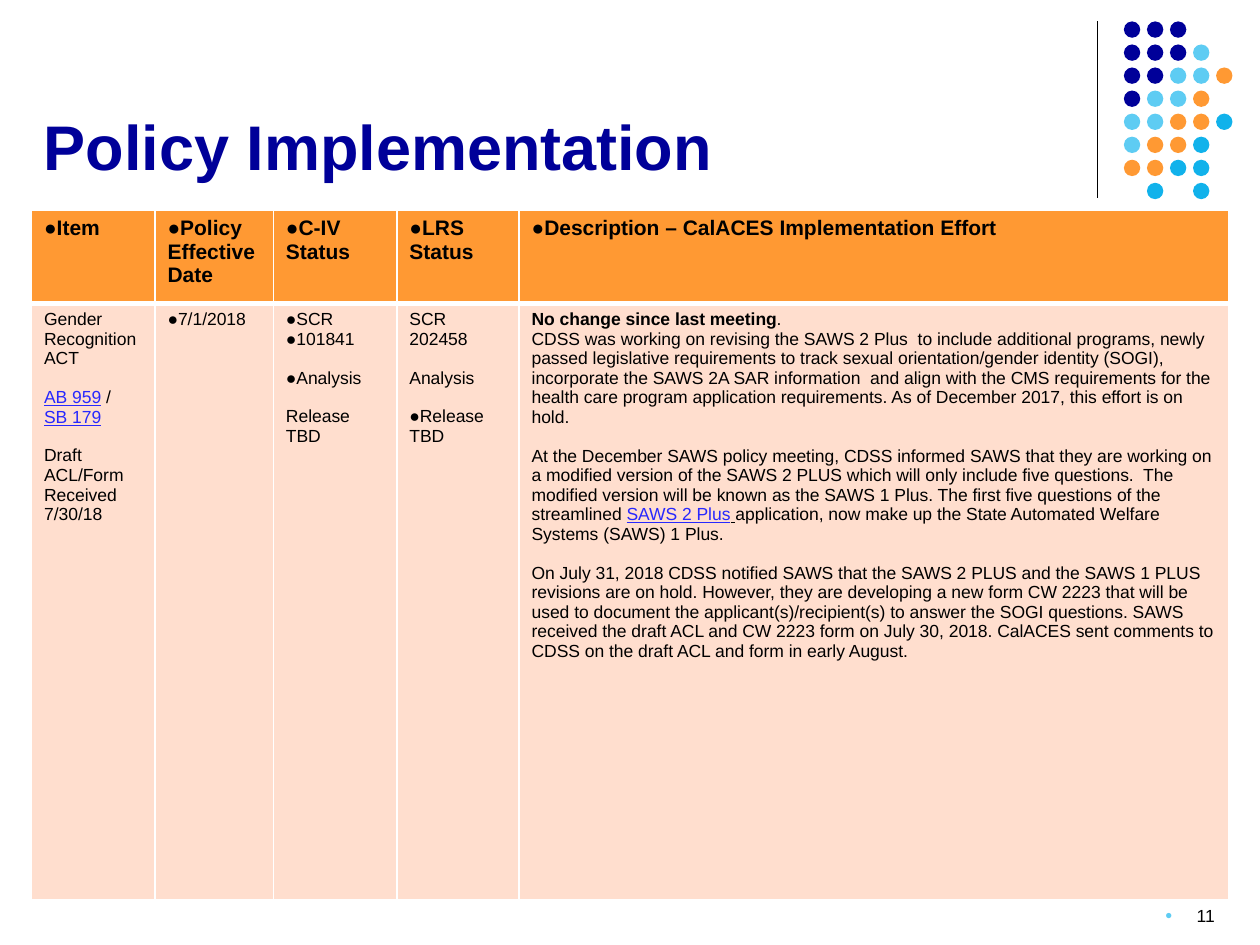
"""Build the Policy Implementation status slide."""
from lxml import etree
from pptx import Presentation
from pptx import util as u
from pptx.dml.color import RGBColor
from pptx.enum import shapes, text
from pptx.oxml.ns import qn

FONT = "Arial"
NAVY, SKY, ORANGE, BLUE = "000099", "5ECCF3", "FF9933", "11B2EB"
PEACH, LINK, BLACK, WHITE = "FFDECE", "2828FE", "000000", "FFFFFF"

DOT_COLORS = {"N": NAVY, "S": SKY, "O": ORANGE, "B": BLUE}
DOT_ROWS = ["NNN", "NNNS", "NNSSO", "NSSO", "SSOOB", "SOOB", "OOBB", " B B"]
DOT_LEFT, DOT_TOP, DOT_SIZE, DOT_PITCH = 8.92, 0.17, 0.13, 0.183

TITLE = "Policy Implementation"
PAGE_NUMBER = "11"
COLUMN_WIDTHS = [0.98, 0.94, 0.98, 0.97, 5.63]
ROW_HEIGHTS = [0.74, 4.73]
HEADERS = ["Item", "Policy Effective Date", "C-IV Status", "LRS Status",
           "Description – CalACES Implementation Effort"]
LINKED = {"color": LINK, "underline": True}
GAP = 11

BODY = [
    [
        {"content": "Gender Recognition ACT"},
        {"content": [("AB 959", LINKED), (" /", {})], "before": GAP},
        {"content": [("SB 179", LINKED)]},
        {"content": "Draft ACL/Form", "before": GAP},
        {"content": "Received 7/30/18"},
    ],
    [{"content": "7/1/2018", "bullet": BLACK}],
    [
        {"content": "SCR", "bullet": BLACK},
        {"content": "101841", "bullet": BLACK},
        {"content": "Analysis", "bullet": BLACK, "before": GAP},
        {"content": "Release", "before": GAP},
        {"content": "TBD"},
    ],
    [
        {"content": "SCR"},
        {"content": "202458"},
        {"content": "Analysis", "before": GAP},
        {"content": "Release TBD", "bullet": BLACK, "before": GAP},
    ],
    [
        {"content": [("No change since last meeting", {"bold": True}), (".", {})]},
        {"content": "CDSS was working on revising the SAWS 2 Plus  to include additional "
                    "programs, newly passed legislative requirements to track sexual "
                    "orientation/gender identity (SOGI), incorporate the SAWS 2A SAR "
                    "information  and align with the CMS requirements for the health care "
                    "program application requirements. As of December 2017, this effort is "
                    "on hold."},
        {"content": [
            ("At the December SAWS policy meeting, CDSS informed SAWS that they are working "
             "on a modified version of the SAWS 2 PLUS which will only include five "
             "questions.  The modified version will be known as the SAWS 1 Plus. The first "
             "five questions of the streamlined ", {}),
            ("SAWS 2 Plus", LINKED),
            (" ", {"underline": True}),
            ("application, now make up the State Automated Welfare Systems (SAWS) 1 Plus.",
             {})], "before": GAP},
        {"content": "On July 31, 2018 CDSS notified SAWS that the SAWS 2 PLUS and the SAWS 1 "
                    "PLUS revisions are on hold. However, they are developing a new form CW "
                    "2223 that will be used to document the applicant(s)/recipient(s) to "
                    "answer the SOGI questions. SAWS received the draft ACL and CW 2223 form "
                    "on July 30, 2018. CalACES sent comments to CDSS on the draft ACL and "
                    "form in early August.", "before": GAP},
    ],
]


def rgb(value):
    return RGBColor.from_string(value)


def add_bullet(para, color, indent, scale):
    props = para._p.get_or_add_pPr()
    props.set("marL", str(u.Inches(indent)))
    props.set("indent", str(-u.Inches(indent)))
    tint = etree.SubElement(props, qn("a:buClr"))
    etree.SubElement(tint, qn("a:srgbClr"), val=color)
    etree.SubElement(props, qn("a:buSzPct"), val=str(scale * 1000))
    etree.SubElement(props, qn("a:buFont"), typeface=FONT)
    etree.SubElement(props, qn("a:buChar"), char="●")


def write(para, content, size=10, bold=False, color=BLACK, align=None, before=0,
          bullet=None, indent=0, scale=100):
    if bullet:
        add_bullet(para, bullet, indent, scale)
    para.space_before = u.Pt(before)
    para.alignment = align
    for words, style in [(content, {})] if isinstance(content, str) else content:
        span = para.add_run()
        span.text = words
        span.font.name = FONT
        span.font.size = u.Pt(size)
        span.font.bold = style.get("bold", bold)
        span.font.underline = style.get("underline", False)
        span.font.color.rgb = rgb(style.get("color", color))


def add_text(page, left, top, width, height, content, anchor, **style):
    box = page.shapes.add_textbox(*map(u.Inches, (left, top, width, height)))
    box.text_frame.word_wrap = True
    box.text_frame.vertical_anchor = anchor
    write(box.text_frame.paragraphs[0], content, **style)


def add_rule(page):
    rule = page.shapes.add_connector(
        shapes.MSO_CONNECTOR.STRAIGHT, *map(u.Inches, (8.71, 0.17, 8.71, 1.57)))
    rule.line.color.rgb = rgb(BLACK)
    rule.line.width = u.Pt(0.75)
    etree.SubElement(rule._element.spPr, qn("a:effectLst"))


def add_dots(page):
    group = page.shapes.add_group_shape()
    for row, codes in enumerate(DOT_ROWS):
        for column, code in enumerate(codes):
            if code == " ":
                continue
            dot = group.shapes.add_shape(
                shapes.MSO_SHAPE.OVAL,
                u.Inches(DOT_LEFT + column * DOT_PITCH), u.Inches(DOT_TOP + row * DOT_PITCH),
                u.Inches(DOT_SIZE), u.Inches(DOT_SIZE))
            dot.shadow.inherit = False
            dot.fill.solid()
            dot.fill.fore_color.rgb = rgb(DOT_COLORS[code])
            dot.line.fill.background()


def format_cell(cell, fill, borders):
    props = cell._tc.get_or_add_tcPr()
    for side, width in borders.items():
        edge = etree.SubElement(props, qn(f"a:ln{side}"), w=str(u.Pt(width)))
        paint = etree.SubElement(edge, qn("a:solidFill"))
        etree.SubElement(paint, qn("a:srgbClr"), val=WHITE)
    cell.fill.solid()
    cell.fill.fore_color.rgb = rgb(fill)


def add_status_table(page):
    table = page.shapes.add_table(
        len(ROW_HEIGHTS), len(COLUMN_WIDTHS), u.Inches(0.25), u.Inches(1.67),
        u.Inches(sum(COLUMN_WIDTHS)), u.Inches(sum(ROW_HEIGHTS))).table
    for row, height in zip(table.rows, ROW_HEIGHTS):
        row.height = u.Inches(height)
    for index, width in enumerate(COLUMN_WIDTHS):
        table.columns[index].width = u.Inches(width)
        header, body = table.cell(0, index), table.cell(1, index)
        format_cell(header, ORANGE, {"L": 1, "R": 1, "T": 1, "B": 3})
        format_cell(body, PEACH, {"L": 1, "R": 1, "T": 3, "B": 1})
        write(header.text_frame.paragraphs[0], HEADERS[index],
              size=12, bold=True, bullet=BLACK)
        frame = body.text_frame
        for number, entry in enumerate(BODY[index]):
            write(frame.add_paragraph() if number else frame.paragraphs[0], **entry)


def main():
    deck = Presentation()
    deck.slide_width, deck.slide_height = u.Inches(10), u.Inches(7.5)
    page = deck.slides.add_slide(deck.slide_layouts[6])
    add_rule(page)
    add_dots(page)
    add_text(page, 0.25, 0.83, 8.42, 0.67, TITLE, text.MSO_ANCHOR.BOTTOM,
             size=36, bold=True, color=NAVY)
    add_status_table(page)
    add_text(page, 7.41, 7.13, 2.33, 0.33, PAGE_NUMBER, text.MSO_ANCHOR.TOP,
             align=text.PP_ALIGN.RIGHT, bullet=SKY, indent=0.25, scale=70)
    deck.save("out.pptx")


if __name__ == "__main__":
    main()
